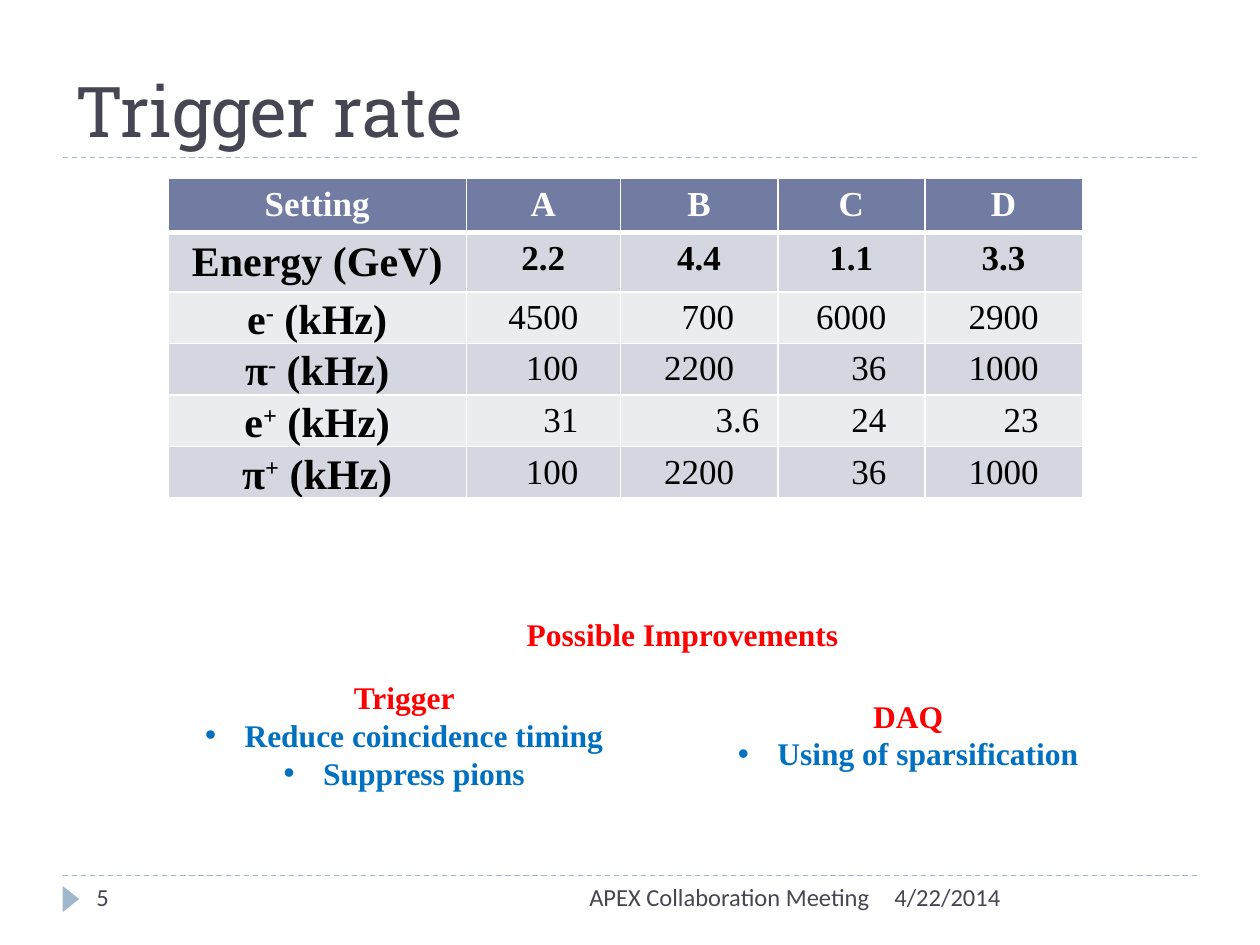
from dataclasses import dataclass

from lxml import etree
from pptx import Presentation
from pptx.dml.color import RGBColor
from pptx.enum.dml import MSO_LINE
from pptx.enum.shapes import MSO_CONNECTOR, MSO_SHAPE
from pptx.enum.text import MSO_ANCHOR, PP_ALIGN
from pptx.oxml.ns import qn
from pptx.util import Pt

LEFT, CENTER, RIGHT = PP_ALIGN.LEFT, PP_ALIGN.CENTER, PP_ALIGN.RIGHT
TOP, BOTTOM = MSO_ANCHOR.TOP, MSO_ANCHOR.BOTTOM
STRAIGHT, DASH, TRIANGLE = MSO_CONNECTOR.STRAIGHT, MSO_LINE.DASH, MSO_SHAPE.ISOSCELES_TRIANGLE

COLORS = {
    "slate": "464653",
    "accent": "9FB8CD",
    "header": "727CA3",
    "dark_band": "D5D7E0",
    "light_band": "EBECF0",
    "white": "FFFFFF",
    "black": "000000",
    "red": "FF0000",
    "blue": "0070C0",
}
SERIF = "Times New Roman"
SANS = "Calibri"
SLAB = "Roboto Slab"

BULLET_INDENT = 22.5
COLUMN_WIDTHS = (170.5, 88, 90, 84, 90)
ROW_HEIGHTS = (31,) + (29.5,) * 5
FOUR_DIGITS = 40
SHORT_DECIMAL_MARGIN = 10.5


@dataclass(frozen=True)
class Line:
    text: str
    color: str = "slate"
    font: str = SANS
    size: float = 14
    bold: bool = False
    bullet: bool = False


@dataclass(frozen=True)
class TextBox:
    left: float
    top: float
    width: float
    height: float
    lines: tuple[Line, ...]
    align: PP_ALIGN = LEFT
    anchor: MSO_ANCHOR = TOP


@dataclass(frozen=True)
class RateRow:
    particle: str
    charge: str
    rates: tuple[str, ...]


def heading(text: str) -> Line:
    return Line(text, "red", SERIF, 18, True)


def bullet(text: str) -> Line:
    return Line(text, "blue", SERIF, 18, True, True)


RATE_ROWS = (
    RateRow("e", "-", ("4500", "700", "6000", "2900")),
    RateRow("π", "-", ("100", "2200", "36", "1000")),
    RateRow("e", "+", ("31", "3.6", "24", "23")),
    RateRow("π", "+", ("100", "2200", "36", "1000")),
)
HEADER_ROWS = (
    ("Setting", "A", "B", "C", "D"),
    ("Energy (GeV)", "2.2", "4.4", "1.1", "3.3"),
)
TEXT_BOXES = (
    TextBox(36, 12, 648, 78, (Line("Trigger rate", font=SLAB, size=40),), anchor=BOTTOM),
    TextBox(48, 500.5, 156, 29, (Line("5"),)),
    TextBox(504, 500.5, 180, 29, (Line("4/22/2014"),)),
    TextBox(228, 500.5, 276, 29, (Line("APEX Collaboration Meeting"),), RIGHT),
    TextBox(72, 384, 318, 73, (heading("Trigger"), bullet("Reduce coincidence timing"),
                               bullet("Suppress pions")), CENTER),
    TextBox(258, 348, 264, 29, (heading("Possible Improvements"),), CENTER),
    TextBox(360, 394.5, 318, 51, (heading("DAQ"), bullet("Using of sparsification")), CENTER),
)


def rgb(name: str) -> RGBColor:
    return RGBColor.from_string(COLORS[name])


def add_text(para, text: str, *, font: str = SERIF, size: float = 20, color: str = "black",
             bold: bool = False, raised: bool = False) -> None:
    span = para.add_run()
    span.text = text
    span.font.name = font
    span.font.size = Pt(size)
    span.font.bold = bold
    span.font.color.rgb = rgb(color)
    if raised:
        span.font._element.set("baseline", "30000")


def add_bullet(para) -> None:
    properties = para._p.get_or_add_pPr()
    properties.set("marL", str(Pt(BULLET_INDENT)))
    properties.set("indent", str(Pt(-BULLET_INDENT)))
    etree.SubElement(properties, qn("a:buFont"), typeface="Arial")
    etree.SubElement(properties, qn("a:buChar"), char="•")


def add_text_box(slide, item: TextBox) -> None:
    box = slide.shapes.add_textbox(Pt(item.left), Pt(item.top), Pt(item.width), Pt(item.height))
    frame = box.text_frame
    frame.word_wrap = True
    frame.vertical_anchor = item.anchor
    for index, line in enumerate(item.lines):
        para = frame.add_paragraph() if index else frame.paragraphs[0]
        para.alignment = item.align
        if line.bullet:
            add_bullet(para)
        add_text(para, line.text, font=line.font, size=line.size, color=line.color, bold=line.bold)


def add_rule(slide, y: float) -> None:
    rule = slide.shapes.add_connector(STRAIGHT, Pt(36), Pt(y), Pt(684), Pt(y))
    rule.line.color.rgb = rgb("accent")
    rule.line.width = Pt(0.75)
    rule.line.dash_style = DASH
    etree.SubElement(rule._element.spPr, qn("a:effectLst"))


def add_page_marker(slide) -> None:
    marker = slide.shapes.add_shape(TRIANGLE, Pt(33), Pt(509), Pt(15), Pt(9.5))
    marker.rotation = 90
    marker.shadow.inherit = False
    marker.fill.solid()
    marker.fill.fore_color.rgb = rgb("accent")
    marker.line.fill.background()


def style_cell(cell, row: int) -> None:
    properties = cell._tc.get_or_add_tcPr()
    widths = {"L": 1, "R": 1, "T": 3 if row == 1 else 1, "B": 3 if row == 0 else 1}
    for side, width in widths.items():
        border = etree.SubElement(properties, qn(f"a:ln{side}"), w=str(Pt(width)))
        fill = etree.SubElement(border, qn("a:solidFill"))
        etree.SubElement(fill, qn("a:srgbClr"), val=COLORS["white"])
    band = "header" if row == 0 else "dark_band" if row % 2 else "light_band"
    cell.fill.solid()
    cell.fill.fore_color.rgb = rgb(band)


def fill_particle_cell(cell, rate_row: RateRow) -> None:
    cell.vertical_anchor = BOTTOM
    cell.margin_left = cell.margin_top = cell.margin_right = Pt(0.75)
    cell.margin_bottom = Pt(0)
    para = cell.text_frame.paragraphs[0]
    para.alignment = CENTER
    add_text(para, rate_row.particle, size=24, bold=True)
    add_text(para, rate_row.charge, size=24, bold=True, raised=True)
    add_text(para, " (kHz)", size=24, bold=True)


def fill_rate_cell(cell, rate: str, width: float) -> None:
    cell.margin_right = Pt(SHORT_DECIMAL_MARGIN if "." in rate else (width - FOUR_DIGITS) / 2)
    para = cell.text_frame.paragraphs[0]
    para.alignment = RIGHT
    add_text(para, rate)


def add_rate_table(slide) -> None:
    table = slide.shapes.add_table(len(ROW_HEIGHTS), len(COLUMN_WIDTHS), Pt(96), Pt(102),
                                   Pt(sum(COLUMN_WIDTHS)), Pt(sum(ROW_HEIGHTS))).table
    for column, width in zip(table.columns, COLUMN_WIDTHS):
        column.width = Pt(width)
    for row, height in enumerate(ROW_HEIGHTS):
        table.rows[row].height = Pt(height)
        for cell in table.rows[row].cells:
            style_cell(cell, row)
    for row, labels in enumerate(HEADER_ROWS):
        for column, label in enumerate(labels):
            para = table.cell(row, column).text_frame.paragraphs[0]
            para.alignment = CENTER
            add_text(para, label, size=24 if row and not column else 20,
                     color="black" if row else "white", bold=True)
    for row, rate_row in enumerate(RATE_ROWS, len(HEADER_ROWS)):
        fill_particle_cell(table.cell(row, 0), rate_row)
        for column, rate in enumerate(rate_row.rates, 1):
            fill_rate_cell(table.cell(row, column), rate, COLUMN_WIDTHS[column])


def main() -> None:
    deck = Presentation()
    deck.slide_width, deck.slide_height = Pt(720), Pt(540)
    page = deck.slides.add_slide(deck.slide_layouts[6])
    for y in (500.5, 90):
        add_rule(page, y)
    add_page_marker(page)
    add_rate_table(page)
    for item in TEXT_BOXES:
        add_text_box(page, item)
    deck.save("out.pptx")


if __name__ == "__main__":
    main()
